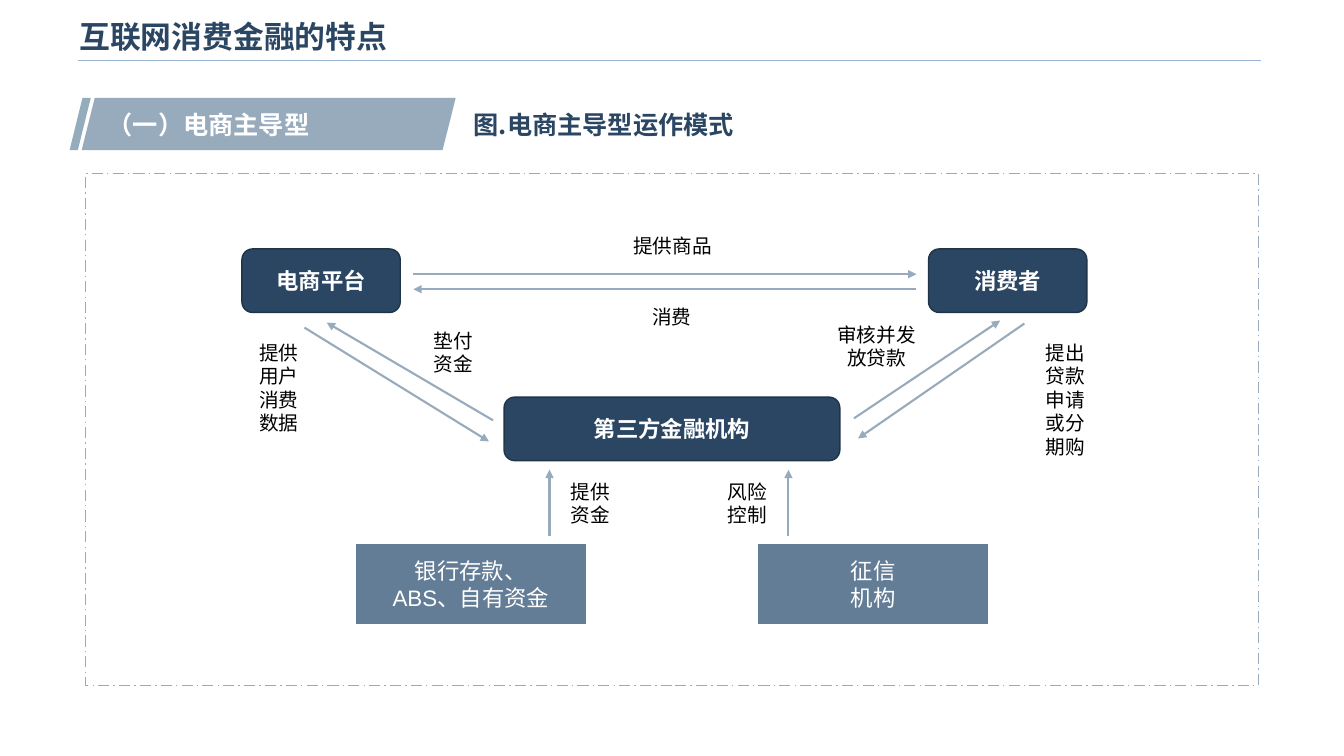
from lxml import etree
from pptx import Presentation
from pptx import util as u
from pptx.dml.color import RGBColor
from pptx.enum import dml, shapes, text
from pptx.oxml import ns

NAVY = RGBColor(0x2B, 0x46, 0x63)
EDGE = RGBColor(0x20, 0x34, 0x49)
SLATE = RGBColor(0x64, 0x7D, 0x96)
MIST = RGBColor(0x97, 0xAB, 0xBD)
STRIP = RGBColor(0x94, 0xAC, 0xBC)
RULE = RGBColor(0x98, 0xB4, 0xD2)
WHITE = RGBColor(0xFF, 0xFF, 0xFF)
BLACK = RGBColor(0, 0, 0)
LATIN = "Arial"
HAN = "Noto Sans CJK SC"
SCALE = 9144
KIND = shapes.MSO_SHAPE


def px(*nums):
    return [u.Emu(n * SCALE) for n in nums]


class Board:
    def __init__(self, deck):
        self.slide = deck.slides.add_slide(deck.slide_layouts[6])
        self.items = self.slide.shapes

    def fill_in(self, frame, words, size, color, bold=False, font=LATIN, align=None):
        frame.text = words
        for para in frame.paragraphs:
            para.alignment = align
            face = para.font
            face.name = font
            face.size = u.Pt(size)
            face.bold = bold
            face.color.rgb = color
            etree.SubElement(face._element, ns.qn("a:ea"), typeface=HAN)

    def shape(self, kind, box, fill=None, line=None, adj=None):
        item = self.items.add_shape(kind, *px(*box))
        item.shadow.inherit = False
        if fill is None:
            item.fill.background()
        else:
            item.fill.solid()
            item.fill.fore_color.rgb = fill
        if line is None:
            item.line.fill.background()
        else:
            item.line.color.rgb = line
            item.line.width = u.Pt(1)
        if adj is not None:
            item.adjustments[0] = adj
        return item

    def node(self, kind, box, words, fill, line=None, bold=False):
        frame = self.shape(kind, box, fill, line).text_frame
        frame.vertical_anchor = text.MSO_ANCHOR.MIDDLE
        self.fill_in(frame, words, 16, WHITE, bold, align=text.PP_ALIGN.CENTER)

    def head(self, box, words, size, color, font=HAN):
        frame = self.items.add_textbox(*px(*box)).text_frame
        frame.word_wrap = True
        frame.vertical_anchor = text.MSO_ANCHOR.MIDDLE
        self.fill_in(frame, words, size, color, True, font)

    def label(self, box, words, wrap=True):
        frame = self.items.add_textbox(*px(*box)).text_frame
        frame.word_wrap = wrap
        frame.auto_size = text.MSO_AUTO_SIZE.SHAPE_TO_FIT_TEXT
        self.fill_in(frame, words, 14, BLACK, align=text.PP_ALIGN.CENTER)

    def line(self, ends, color=MIST, width=1.5, arrow=True):
        item = self.items.add_connector(shapes.MSO_CONNECTOR.STRAIGHT, *px(*ends))
        item.line.color.rgb = color
        item.line.width = u.Pt(width)
        props = item._element.spPr
        if arrow:
            etree.SubElement(props.find(ns.qn("a:ln")), ns.qn("a:tailEnd"), type="triangle")
        etree.SubElement(props, ns.qn("a:effectLst"))


def main():
    deck = Presentation()
    deck.slide_width, deck.slide_height = px(1333, 750)
    board = Board(deck)

    board.line((77, 60, 1251, 60), RULE, 1, False)
    board.head((69, 9, 1071, 53), "互联网消费金融的特点", 22, NAVY, LATIN)
    board.shape(KIND.PARALLELOGRAM, (69, 97, 21, 52), STRIP, adj=0.61)
    board.shape(KIND.PARALLELOGRAM, (81, 97, 371, 52), MIST, adj=0.25)
    board.head((97, 103, 320, 40), "（一）电商主导型", 18, WHITE)
    panel = board.shape(KIND.RECTANGLE, (85, 172, 1163, 508), line=MIST)
    panel.line.dash_style = dml.MSO_LINE.LONG_DASH_DOT
    board.head((460, 103, 336, 40), "图.电商主导型运作模式", 18, NAVY)

    for left, top, width, words in (
        (240, 247, 157, "电商平台"),
        (921, 247, 157, "消费者"),
        (500, 394, 333, "第三方金融机构"),
    ):
        board.node(KIND.ROUNDED_RECTANGLE, (left, top, width, 63), words, NAVY, EDGE, True)

    for left, words in ((353, "银行存款、\nABS、自有资金"), (752, "征信\n机构")):
        board.node(KIND.FLOWCHART_PROCESS, (left, 540, 228, 79), words, SLATE)

    board.label((618, 227, 98, 34), "提供商品", False)
    board.label((637, 298, 59, 34), "消费", False)
    for box, words in (
        ((240, 333, 73, 104), "提供用户消费数据"),
        ((1020, 333, 73, 128), "提出贷款申请或分期购"),
        ((817, 315, 105, 57), "审核并发放贷款"),
        ((417, 321, 65, 57), "垫付资金"),
        ((552, 471, 67, 57), "提供资金"),
        ((705, 471, 72, 57), "风险控制"),
    ):
        board.label(box, words)

    for ends in (
        (410, 272, 909, 272),
        (909, 287, 410, 287),
        (1016, 321, 851, 435),
        (847, 415, 992, 318),
        (302, 325, 485, 438),
        (489, 417, 324, 320),
        (782, 532, 782, 466),
        (545, 532, 545, 466),
    ):
        board.line(ends)

    deck.save("out.pptx")


if __name__ == "__main__":
    main()
